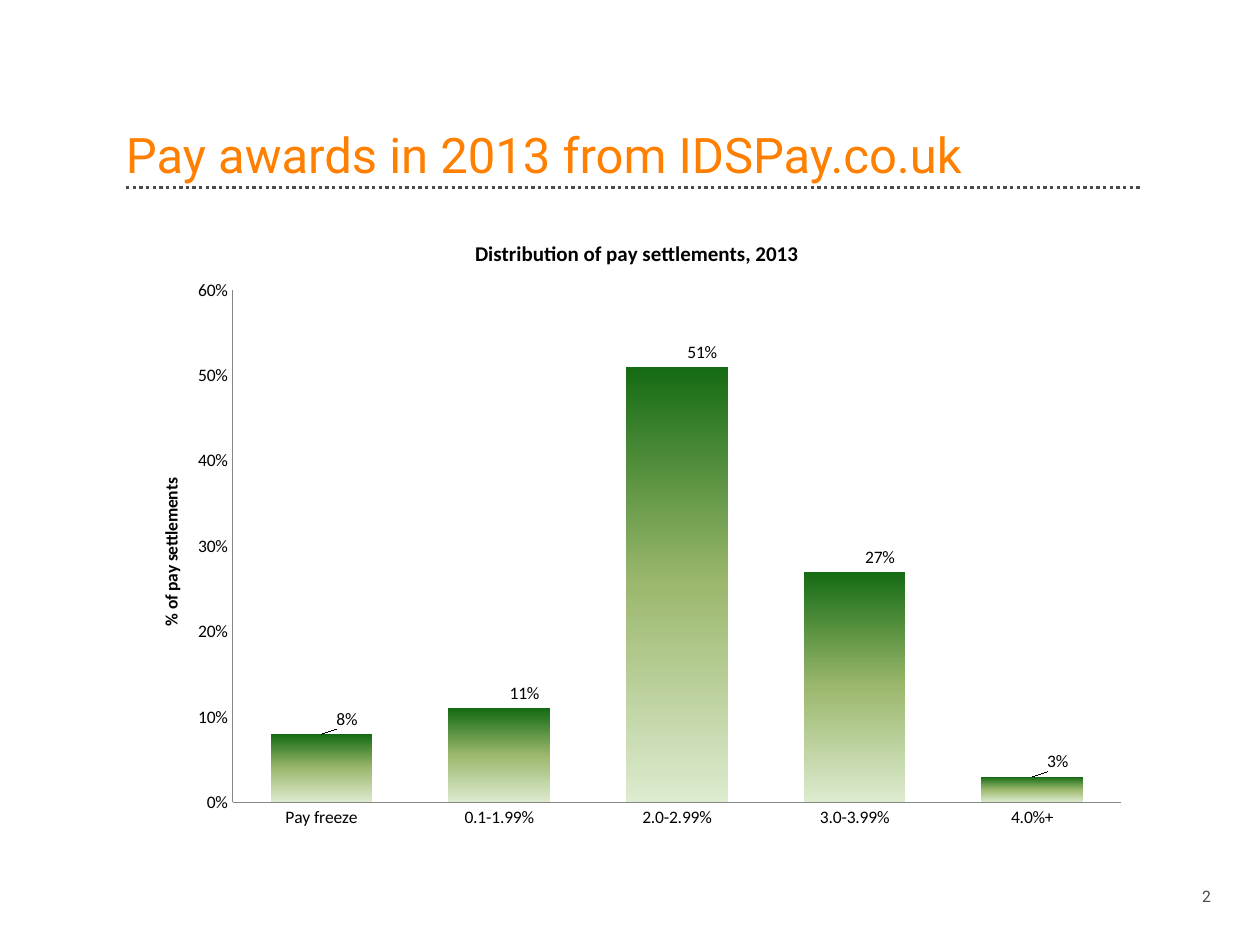
"""Build the slide on the distribution of pay awards in 2013."""
from lxml import etree
from pptx import Presentation
from pptx import oxml
from pptx import util as u
from pptx.chart import data
from pptx.dml.color import RGBColor
from pptx.enum import chart as ch, dml, shapes, text
from pptx.oxml import ns

ORANGE = RGBColor(0xFF, 0x80, 0x00)
GREY = RGBColor(0x4B, 0x4B, 0x4B)
AXIS_GREY = RGBColor(0x86, 0x86, 0x86)
BLACK = RGBColor(0, 0, 0)
GRADIENT = [(0, RGBColor(0xDD, 0xEB, 0xCF)), (50, RGBColor(0x9C, 0xB8, 0x6E)),
            (100, RGBColor(0x15, 0x6B, 0x13))]

HEADING = "Pay awards in 2013 from IDSPay.co.uk"
PAGE = "2"
CHART_TITLE = "Distribution of pay settlements, 2013"
VALUE_TITLE = "% of pay settlements"
SETTLEMENTS = {"Pay freeze": 0.08, "0.1-1.99%": 0.11, "2.0-2.99%": 0.51,
               "3.0-3.99%": 0.27, "4.0%+": 0.03}
SERIES = ["Series 1", "Series 2"]
PERCENT = "0%"
LEFT, WIDTH = 72, 580.3
RULE_Y = 107.3


def style(font, name="Calibri", size=10, color=BLACK, bold=False):
    font.name, font.size, font.bold = name, u.Pt(size), bold
    font.color.rgb = color


def add_text(slide, words, box, size, color, margins=None, align=text.PP_ALIGN.LEFT,
             anchor=text.MSO_ANCHOR.TOP, spacing=None):
    frame = slide.shapes.add_textbox(*map(u.Pt, box)).text_frame
    frame.word_wrap, frame.vertical_anchor = True, anchor
    if margins is not None:
        frame.margin_left = frame.margin_right = u.Pt(margins)
        frame.margin_top = frame.margin_bottom = u.Pt(margins)
    paragraph = frame.paragraphs[0]
    paragraph.alignment, paragraph.line_spacing = align, spacing
    run = paragraph.add_run()
    run.text = words
    style(run.font, "Roboto", size, color)


def place(parent, index, inner=False, **fractions):
    for old in parent.findall(ns.qn("c:layout")):
        parent.remove(old)
    layout = etree.Element(ns.qn("c:layout"))
    manual = etree.SubElement(layout, ns.qn("c:manualLayout"))
    settings = {"layoutTarget": "inner"} if inner else {}
    if parent.tag != ns.qn("c:dLbl"):
        settings.update(xMode="edge", yMode="edge")
    for key, value in {**settings, **fractions}.items():
        etree.SubElement(manual, ns.qn("c:" + key)).set("val", str(value))
    parent.insert(index, layout)


def add_title(owner, words, size, **position):
    frame = owner.text_frame
    frame.text = words
    style(frame.paragraphs[0].runs[0].font, size=size, bold=True)
    place(owner._element, 1, **position)


def fill_gradient(series):
    stops = "".join(f'<a:gs pos="{pos * 1000}"><a:srgbClr val="{color}"/></a:gs>'
                    for pos, color in GRADIENT)
    properties = series.format.fill._xPr
    properties.insert(0, oxml.parse_xml(
        f'<a:gradFill {ns.nsdecls("a")}><a:gsLst>{stops}</a:gsLst>'
        '<a:lin ang="16200000" scaled="0"/></a:gradFill>'))


def label_series(series):
    labels = series.data_labels
    labels.show_value = True
    labels.number_format, labels.number_format_is_linked = PERCENT, False
    labels.position = ch.XL_LABEL_POSITION.OUTSIDE_END
    style(labels.font)
    for index in range(len(SETTLEMENTS)):
        label = series.points[index].data_label
        style(label.font)
        label.position = ch.XL_LABEL_POSITION.OUTSIDE_END
        element = label._get_or_add_dLbl()
        place(element, 1, x=0.025, y=0)
        element.insert(2, oxml.parse_xml(
            f'<c:numFmt {ns.nsdecls("c")} formatCode="{PERCENT}" sourceLinked="0"/>'))


def add_distribution(slide):
    figures = data.CategoryChartData(number_format=PERCENT)
    figures.categories = list(SETTLEMENTS)
    for name in SERIES:
        figures.add_series(name, list(SETTLEMENTS.values()))
    chart = slide.shapes.add_chart(
        ch.XL_CHART_TYPE.COLUMN_CLUSTERED, u.Pt(LEFT), u.Pt(120.2), u.Pt(WIDTH),
        u.Pt(360), figures).chart
    style(chart.font)
    chart.has_legend = False
    add_title(chart.chart_title, CHART_TITLE, 12, x=0.34, y=0.04)
    for axis in (chart.category_axis, chart.value_axis):
        axis.major_tick_mark = axis.minor_tick_mark = ch.XL_TICK_MARK.NONE
        axis.has_major_gridlines = False
        axis.format.line.color.rgb = AXIS_GREY
        axis.format.line.width = u.Pt(0.75)
        style(axis.tick_labels.font)
    values = chart.value_axis
    values.minimum_scale, values.maximum_scale, values.major_unit = 0, 0.6, 0.1
    values.tick_labels.number_format = PERCENT
    values.tick_labels.number_format_is_linked = False
    add_title(values.axis_title, VALUE_TITLE, 10, x=0.03, y=0.42)
    plot = chart.plots[0]
    plot.gap_width, plot.overlap, plot.vary_by_categories = 75, 100, False
    for series in plot.series:
        fill_gradient(series)
    label_series(plot.series[0])
    place(chart._chartSpace.chart.plotArea, 0, inner=True, x=0.105, y=0.127,
          w=0.875, h=0.813)


def main():
    deck = Presentation()
    deck.slide_width, deck.slide_height = u.Pt(720), u.Pt(540)
    slide = deck.slides.add_slide(deck.slide_layouts[6])
    rule = slide.shapes.add_connector(
        shapes.MSO_CONNECTOR.STRAIGHT, u.Pt(LEFT), u.Pt(RULE_Y),
        u.Pt(LEFT + WIDTH), u.Pt(RULE_Y))
    rule.line.color.rgb, rule.line.width = GREY, u.Pt(1.9)
    rule.line.dash_style = dml.MSO_LINE.ROUND_DOT
    etree.SubElement(rule._element.spPr, ns.qn("a:effectLst"))
    add_text(slide, HEADING, (LEFT, 39.6, WIDTH, 65.5), 28, ORANGE, margins=0,
             anchor=text.MSO_ANCHOR.BOTTOM, spacing=0.9)
    add_text(slide, PAGE, (663.1, 503.3, 36, 18), 9, GREY, align=text.PP_ALIGN.RIGHT)
    add_distribution(slide)
    deck.save("out.pptx")


if __name__ == "__main__":
    main()
